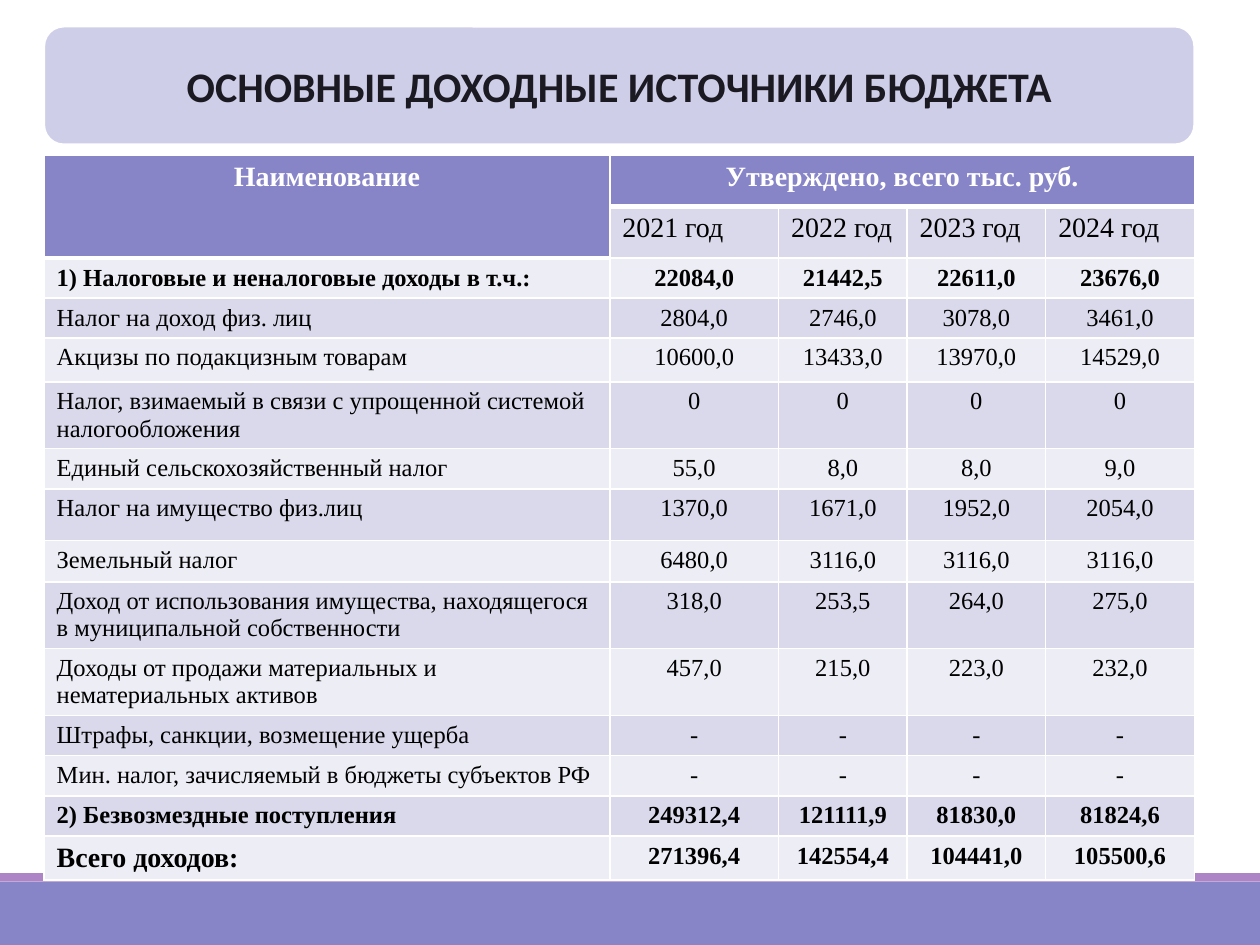
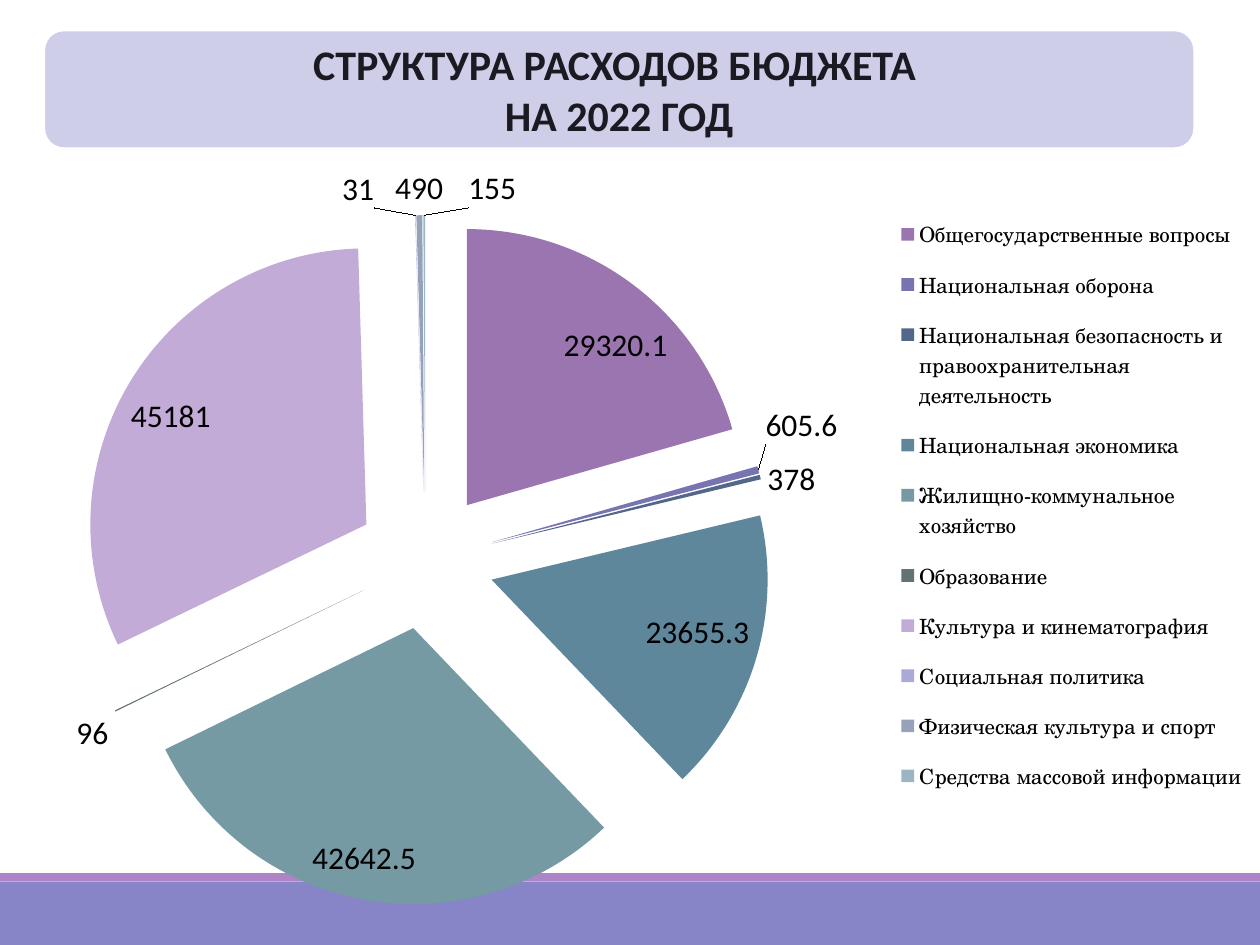
from dataclasses import dataclass

from lxml import etree
from pptx import Presentation
from pptx import util as u
from pptx.chart.data import CategoryChartData
from pptx.dml.color import RGBColor
from pptx.enum import chart as charts, shapes, text
from pptx.oxml import ns

COLOURS = {
    "band": "8784C7", "stripe": "AD84C6", "title_fill": "CFCEE9",
    "title_text": "1B1A22", "white": "FFFFFF", "black": "000000",
    "row_dark": "D9D9EB", "row_light": "EDEDF5",
}
SLICE_COLOURS = ["9B75B0", "7874B2", "53678A", "5E879C", "769AA3",
                 "637374", "C3ABD7", "ABA9D8", "96A1BA", "9DB4C5"]
TITLE_FONT, TABLE_FONT, LEGEND_FONT = "Calibri", "Times New Roman", "TeX Gyre Schola"

YEARS = ["2021 год", "2022 год", "2023 год", "2024 год"]
INCOME = [
    ("1) Налоговые и неналоговые доходы в т.ч.:", "22084,0", "21442,5", "22611,0", "23676,0"),
    ("Налог на доход физ. лиц", "2804,0", "2746,0", "3078,0", "3461,0"),
    ("Акцизы по подакцизным товарам", "10600,0", "13433,0", "13970,0", "14529,0"),
    ("Налог, взимаемый в связи с упрощенной системой налогообложения", "0", "0", "0", "0"),
    ("Единый сельскохозяйственный налог", "55,0", "8,0", "8,0", "9,0"),
    ("Налог на имущество физ.лиц", "1370,0", "1671,0", "1952,0", "2054,0"),
    ("Земельный налог", "6480,0", "3116,0", "3116,0", "3116,0"),
    ("Доход от использования имущества, находящегося в муниципальной собственности",
     "318,0", "253,5", "264,0", "275,0"),
    ("Доходы от продажи материальных и нематериальных активов",
     "457,0", "215,0", "223,0", "232,0"),
    ("Штрафы, санкции, возмещение ущерба", "-", "-", "-", "-"),
    ("Мин. налог, зачисляемый в бюджеты субъектов РФ", "-", "-", "-", "-"),
    ("2) Безвозмездные поступления", "249312,4", "121111,9", "81830,0", "81824,6"),
    ("Всего доходов:", "271396,4", "142554,4", "104441,0", "105500,6"),
]
BOLD_ROWS = ("1)", "2)", "Всего")
COLUMN_WEIGHTS = [4.49, 1.34, 1.02, 1.1, 1.18]
ROW_WEIGHTS = [0.41, 0.41, 0.32, 0.31, 0.35, 0.53, 0.32, 0.41,
               0.33, 0.53, 0.53, 0.32, 0.32, 0.32, 0.35]
EXPENSES = {
    "Общегосударственные вопросы": 29320.1,
    "Национальная оборона": 605.6,
    "Национальная безопасность и правоохранительная деятельность": 378,
    "Национальная экономика": 23655.3,
    "Жилищно-коммунальное хозяйство": 42642.5,
    "Образование": 96,
    "Культура и кинематография": 45181,
    "Социальная политика": 31,
    "Физическая культура и спорт": 490,
    "Средства массовой информации": 155,
}


@dataclass
class Box:
    """A rectangle measured in inches."""
    left: float
    top: float
    width: float
    height: float

    def inner(self, left, top, width, height):
        """Return a box given as shares of this one."""
        return Box(self.left + left * self.width, self.top + top * self.height,
                   width * self.width, height * self.height)

    def place(self):
        """Return the four lengths that python-pptx expects."""
        return [u.Inches(side) for side in (self.left, self.top, self.width, self.height)]


SLIDE = Box(0, 0, 10, 7.5)


def colour(name):
    """Look up a named colour."""
    return RGBColor.from_string(COLOURS[name])


def style_font(font, name, size, shade="black", bold=False):
    """Apply typeface, size, colour and weight to a font."""
    font.name, font.size, font.bold = name, u.Pt(size), bold
    font.color.rgb = colour(shade)


def add_panel(page, box, kind, fill):
    """Add a flat filled shape without outline."""
    panel = page.shapes.add_shape(kind, *box.place())
    panel.shadow.inherit = False
    panel.fill.solid()
    panel.fill.fore_color.rgb = colour(fill)
    panel.line.fill.background()
    return panel


def add_footer(deck, page, box):
    """Draw the footer bands and hand them to the slide master."""
    for top, height, fill in ((0.12, 0.88, "band"), (0, 0.12, "stripe")):
        band = add_panel(page, box.inner(0, top, 1, height),
                         shapes.MSO_SHAPE.RECTANGLE, fill)
        deck.slide_master.shapes._spTree.append(band._element)


def add_title(page, box, lines):
    """Add the rounded title panel."""
    panel = add_panel(page, box, shapes.MSO_SHAPE.ROUNDED_RECTANGLE, "title_fill")
    panel.line.color.rgb = colour("white")
    panel.line.width = u.Pt(1.25)
    frame = panel.text_frame
    frame.word_wrap = True
    frame.vertical_anchor = text.MSO_ANCHOR.MIDDLE
    frame.text = "\n".join(lines)
    for para in frame.paragraphs:
        para.alignment = text.PP_ALIGN.CENTER
        for span in para.runs:
            style_font(span.font, TITLE_FONT, 24, "title_text", True)


def style_cell(cell, fill, bottom):
    """Give a cell white borders and a solid fill."""
    properties = cell._tc.get_or_add_tcPr()
    for side, points in (("L", 1), ("R", 1), ("T", 1), ("B", bottom)):
        line = etree.SubElement(properties, ns.qn(f"a:ln{side}"), w=str(u.Pt(points)))
        solid = etree.SubElement(line, ns.qn("a:solidFill"))
        etree.SubElement(solid, ns.qn("a:srgbClr"), val=COLOURS["white"])
    cell.fill.solid()
    cell.fill.fore_color.rgb = colour(fill)


def write_cell(cell, words, size, shade="black", bold=False, centred=False):
    """Write one formatted paragraph into a cell."""
    cell.text_frame.text = words
    para = cell.text_frame.paragraphs[0]
    para.alignment = text.PP_ALIGN.CENTER if centred else text.PP_ALIGN.LEFT
    for span in para.runs:
        style_font(span.font, TABLE_FONT, size, shade, bold)


def add_income_table(page, box):
    """Fill the box with the table of income sources."""
    table = page.shapes.add_table(len(ROW_WEIGHTS), len(COLUMN_WEIGHTS), *box.place()).table
    for column, weight in zip(table.columns, COLUMN_WEIGHTS):
        column.width = u.Inches(box.width * weight / sum(COLUMN_WEIGHTS))
    for row, weight in zip(table.rows, ROW_WEIGHTS):
        row.height = u.Inches(box.height * weight / sum(ROW_WEIGHTS))
    for r in range(len(ROW_WEIGHTS)):
        for c in range(len(COLUMN_WEIGHTS)):
            header = r == 0 or (r, c) == (1, 0)
            fill = "band" if header else "row_dark" if r % 2 else "row_light"
            style_cell(table.cell(r, c), fill, 3 if header else 1)
    table.cell(0, 0).merge(table.cell(1, 0))
    table.cell(0, 1).merge(table.cell(0, len(YEARS)))
    for c, words in enumerate(("Наименование", "Утверждено, всего тыс. руб.")):
        write_cell(table.cell(0, c), words, 16, "white", True, True)
    for c, year in enumerate(YEARS, 1):
        write_cell(table.cell(1, c), year, 16)
    for r, record in enumerate(INCOME, 2):
        bold = record[0].startswith(BOLD_ROWS)
        for c, words in enumerate(record):
            size = 16 if words == "Всего доходов:" else 14
            write_cell(table.cell(r, c), words, size, bold=bold, centred=c > 0)


def set_layout(parent, index, target, **shares):
    """Fix the place of a chart region as shares of the chart."""
    for old in parent.findall(ns.qn("c:layout")):
        parent.remove(old)
    layout = etree.Element(ns.qn("c:layout"))
    manual = etree.SubElement(layout, ns.qn("c:manualLayout"))
    if target:
        etree.SubElement(manual, ns.qn("c:layoutTarget"), val=target)
    for mode in ("xMode", "yMode"):
        etree.SubElement(manual, ns.qn(f"c:{mode}"), val="edge")
    for name, share in shares.items():
        etree.SubElement(manual, ns.qn(f"c:{name}"), val=str(share))
    parent.insert(index, layout)


def add_expense_pie(page, box):
    """Fill the box with the exploded pie of expenses and its legend."""
    data = CategoryChartData()
    data.categories = list(EXPENSES)
    data.add_series("Series 1", list(EXPENSES.values()))
    chart = page.shapes.add_chart(charts.XL_CHART_TYPE.PIE, *box.place(), data).chart
    style_font(chart.font, TITLE_FONT, 18)
    chart.has_title = False
    chart.has_legend = True
    chart.legend.position = charts.XL_LEGEND_POSITION.RIGHT
    chart.legend.include_in_layout = False
    style_font(chart.legend.font, LEGEND_FONT, 12)
    plot = chart.plots[0]
    plot.vary_by_categories = True
    series = plot.series[0]
    explosion = etree.Element(ns.qn("c:explosion"), val="25")
    series._element.find(ns.qn("c:tx")).addnext(explosion)
    for index, shade in enumerate(SLICE_COLOURS):
        fill = series.points[index].format.fill
        fill.solid()
        fill.fore_color.rgb = RGBColor.from_string(shade)
    plot.has_data_labels = True
    labels = plot.data_labels
    labels.show_value = True
    labels.show_percentage = False
    labels.number_format, labels.number_format_is_linked = "General", False
    labels.position = charts.XL_LABEL_POSITION.BEST_FIT
    style_font(labels.font, TITLE_FONT, 18)
    area = chart._chartSpace.find(".//" + ns.qn("c:plotArea"))
    set_layout(area, 0, "inner", x=0.06, y=0.08, w=0.55, h=0.9)
    set_layout(chart.legend._element, 1, None, x=0.71, y=0.07, w=0.28, h=0.78)


def build_income(page, box):
    """Build the slide of income sources."""
    add_title(page, box.inner(0.035, 0.028, 0.913, 0.125),
              ["ОСНОВНЫЕ ДОХОДНЫЕ ИСТОЧНИКИ БЮДЖЕТА"])
    add_income_table(page, box.inner(0.035, 0.164, 0.913, 0.766))


def build_expenses(page, box):
    """Build the slide of the expense structure."""
    add_expense_pie(page, box.inner(0.004, 0.153, 0.996, 0.83))
    add_title(page, box.inner(0.035, 0.032, 0.913, 0.125),
              ["СТРУКТУРА РАСХОДОВ БЮДЖЕТА ", "НА 2022 ГОД"])


def main():
    """Create and save the deck."""
    deck = Presentation()
    deck.slide_width, deck.slide_height = SLIDE.place()[2:]
    pages = [deck.slides.add_slide(deck.slide_layouts[6]) for _ in range(2)]
    add_footer(deck, pages[0], SLIDE.inner(0, 0.924, 1, 0.076))
    build_income(pages[0], SLIDE)
    build_expenses(pages[1], SLIDE)
    deck.save("out.pptx")


if __name__ == "__main__":
    main()
